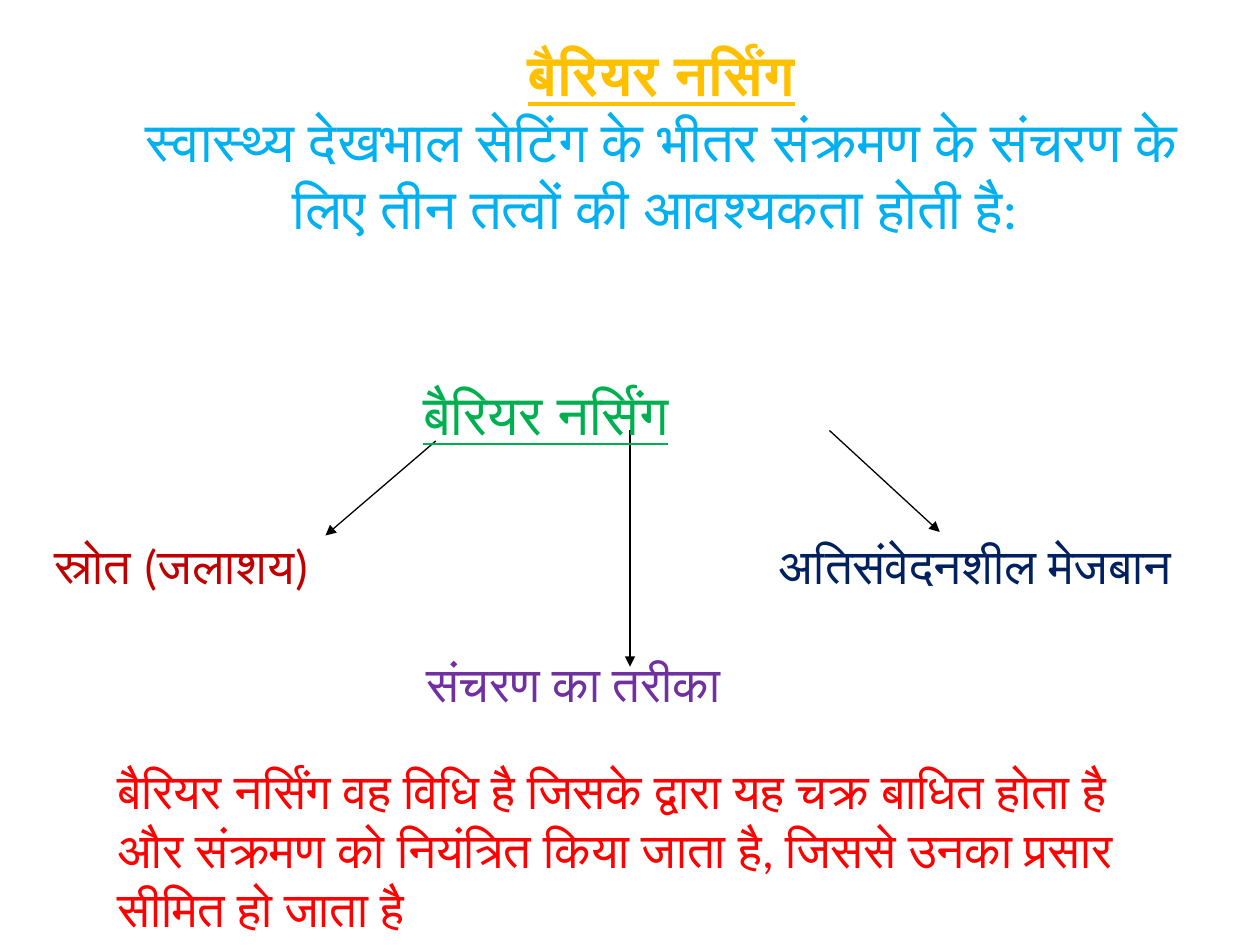
"""Build the barrier nursing slide with its three elements of transmission."""
from lxml.etree import SubElement
from pptx import Presentation
from pptx.dml.color import RGBColor
from pptx.enum.shapes import MSO_CONNECTOR as Connector
from pptx.enum.text import MSO_ANCHOR as Anchor, PP_ALIGN as Align
from pptx.oxml.ns import qn
from pptx.util import Pt


def color(hex_code):
    return RGBColor.from_string(hex_code)


def add_text(box, lines, size, anchor=Anchor.MIDDLE, wrap=True, align=Align.LEFT):
    frame = slide.shapes.add_textbox(*map(Pt, box)).text_frame
    frame.word_wrap = wrap
    frame.vertical_anchor = anchor
    frame.text = "\n".join(text for text, _, _ in lines)
    for paragraph, (_, hex_code, heading) in zip(frame.paragraphs, lines):
        paragraph.alignment = align
        font = paragraph.runs[0].font
        font.name = "Calibri"
        font.size = Pt(size)
        font.color.rgb = color(hex_code)
        font.underline = heading
    return frame


presentation = Presentation()
presentation.slide_width, presentation.slide_height = Pt(720), Pt(540)
slide = presentation.slides.add_slide(presentation.slide_layouts[6])

arrows = [
    (249, 252, 186, 306),
    (360, 246, 360, 381),
    (474, 246, 537, 304),
]
for ends in arrows:
    arrow = slide.shapes.add_connector(Connector.STRAIGHT, *map(Pt, ends))
    arrow.line.color.rgb = color("000000")
    arrow.line.width = Pt(0.75)
    SubElement(arrow.line._get_or_add_ln(), qn("a:tailEnd"), type="triangle")
    SubElement(arrow._element.spPr, qn("a:effectLst"))

title = add_text(
    (72, -1.5, 612, 184.5),
    [
        ("बैरियर नर्सिंग", "FFC000", True),
        ("स्वास्थ्य देखभाल सेटिंग के भीतर संक्रमण के संचरण के लिए तीन तत्वों की आवश्यकता होती है: ", "00B0F0", False),
    ],
    32,
    align=Align.CENTER,
)
title.margin_bottom = Pt(25)
title.paragraphs[0].runs[0].font.bold = True

add_text((234.75, 213, 191, 46), [("बैरियर नर्सिंग", "00B050", True)], 32, wrap=False)

elements = [
    ("स्रोत (जलाशय)", "C00000", 24, 302, 162),
    ("अतिसंवेदनशील मेजबान", "002060", 438, 302, 240),
    ("संचरण का तरीका", "7030A0", 236.5, 369, 184),
]
for label, hex_code, left, top, width in elements:
    add_text((left, top, width, 42), [(label, hex_code, False)], 28, wrap=False)

add_text(
    (60, 431.25, 612, 108.75),
    [("बैरियर नर्सिंग वह विधि है जिसके द्वारा यह चक्र बाधित होता है और संक्रमण को नियंत्रित किया जाता है, जिससे उनका प्रसार सीमित हो जाता है", "FF0000", False)],
    28,
    anchor=Anchor.TOP,
)

presentation.save("out.pptx")
